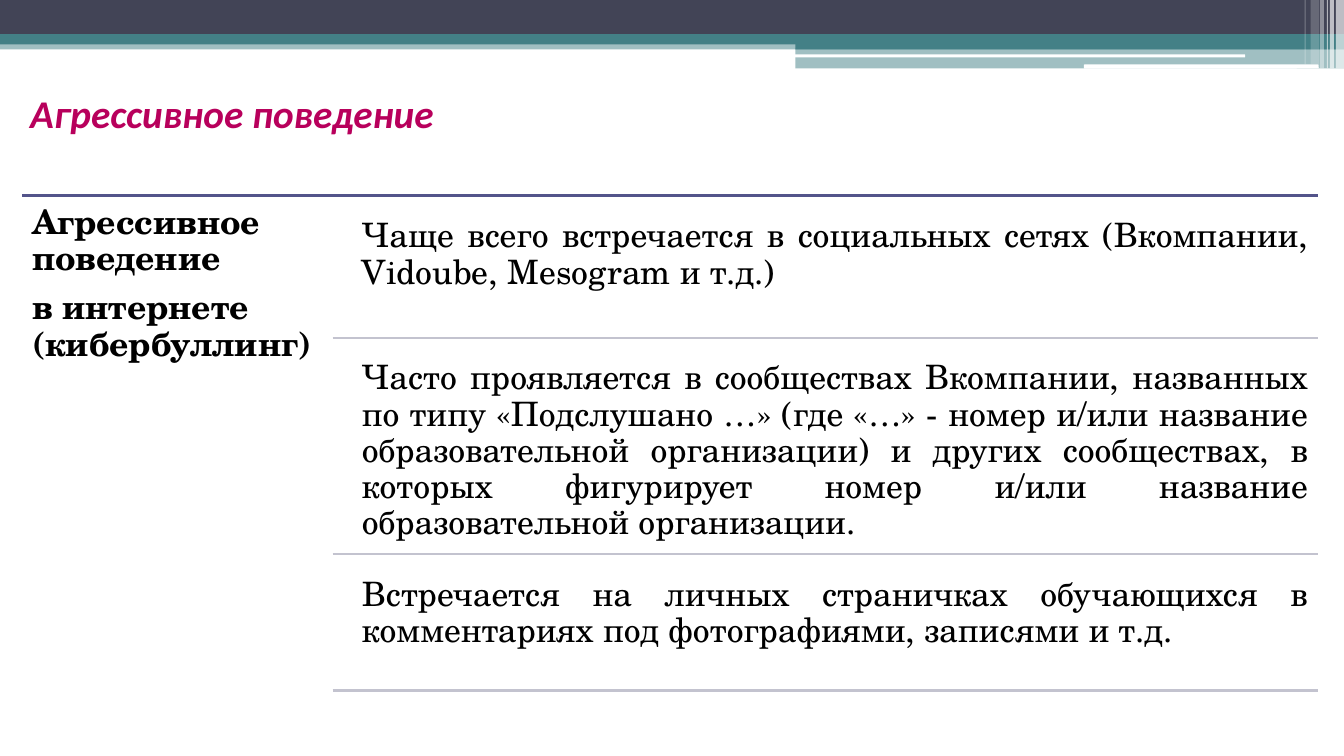
import pptx
import pptx.util
import pptx.dml.color
import pptx.enum.shapes
import pptx.enum.text
import pptx.oxml.ns
import lxml.etree

Inches = pptx.util.Inches
Pt = pptx.util.Pt
Shape = pptx.enum.shapes.MSO_SHAPE
Align = pptx.enum.text.PP_ALIGN
qn = pptx.oxml.ns.qn


def color(value):
    return pptx.dml.color.RGBColor.from_string(value)


class SlideBuilder:
    body_font = "TeX Gyre Schola"
    title_font = "Calibri"
    navy = "424456"
    teal = "438086"
    white = "FFFFFF"
    black = "000000"
    magenta = "B8005C"
    violet = "53548A"
    gray = "C3C3CF"

    def __init__(self, prs):
        self.slide = prs.slides.add_slide(prs.slide_layouts[5])

    def bar(self, left, top, width, height, fill, alpha=100, rounded=False):
        kind = Shape.ROUNDED_RECTANGLE if rounded else Shape.RECTANGLE
        sp = self.slide.shapes.add_shape(
            kind, Inches(left), Inches(top), Inches(width), Inches(height))
        sp.shadow.inherit = False
        sp.line.fill.background()
        sp.fill.solid()
        sp.fill.fore_color.rgb = color(fill)
        if alpha < 100:
            clr = sp.fill._xPr.find(qn("a:solidFill")).find(qn("a:srgbClr"))
            lxml.etree.SubElement(clr, qn("a:alpha")).set("val", str(alpha * 1000))

    def rule(self, left, right, y, line):
        cn = self.slide.shapes.add_connector(
            pptx.enum.shapes.MSO_CONNECTOR.STRAIGHT,
            Inches(left), Inches(y), Inches(right), Inches(y))
        cn.line.color.rgb = color(line)
        cn.line.width = Pt(1.5)
        lxml.etree.SubElement(cn._element.spPr, qn("a:effectLst"))

    def style(self, p, font, size, fill, align, bold=False, italic=False):
        p.alignment = align
        p.font.name = font
        p.font.size = Pt(size)
        p.font.color.rgb = color(fill)
        p.font.bold = bold
        p.font.italic = italic

    def title(self, left, top, width, height, text):
        sp = self.slide.shapes.title
        sp.left, sp.top = Inches(left), Inches(top)
        sp.width, sp.height = Inches(width), Inches(height)
        tf = sp.text_frame
        tf.text = text
        tf.word_wrap = True
        tf.auto_size = pptx.enum.text.MSO_AUTO_SIZE.SHAPE_TO_FIT_TEXT
        tf.vertical_anchor = pptx.enum.text.MSO_ANCHOR.TOP
        self.style(tf.paragraphs[0], self.title_font, 28, self.magenta,
                   Align.JUSTIFY, bold=True, italic=True)

    def text(self, left, top, width, height, paragraphs, bold=False):
        sp = self.slide.shapes.add_textbox(
            Inches(left), Inches(top), Inches(width), Inches(height))
        tf = sp.text_frame
        tf.word_wrap = True
        tf.margin_left = tf.margin_right = Inches(0.1)
        tf.margin_top = tf.margin_bottom = Inches(0.1)
        for i, (text, align) in enumerate(paragraphs):
            p = tf.add_paragraph() if i else tf.paragraphs[0]
            p.text = text
            p.line_spacing = 0.9
            p.space_after = Pt(9)
            self.style(p, self.body_font, 24, self.black, align, bold)


def main():
    prs = pptx.Presentation()
    prs.slide_width, prs.slide_height = Inches(13.33), Inches(7.5)
    s = SlideBuilder(prs)

    s.bar(0, 0.4, 13.33, 0.09, s.teal, 50)
    s.bar(0, 0, 13.33, 0.34, s.navy)
    s.bar(0, 0.34, 13.33, 0.1, s.teal)
    s.bar(7.89, 0.39, 5.44, 0.1, s.teal)
    s.bar(7.89, 0.48, 5.44, 0.2, s.teal, 50)
    s.bar(7.88, 0.54, 4.47, 0.03, s.white, rounded=True)
    s.bar(10.75, 0.64, 2.33, 0.04, s.white, rounded=True)
    stripes = [
        (13.25, 0.08, 0.68, 65),
        (13.19, 0.04, 0.68, 65),
        (13.16, 0.01, 0.68, 60),
        (13.09, 0.04, 0.68, 40),
        (13, 0.08, 0.64, 20),
        (12.94, 0.01, 0.64, 30),
    ]
    for left, width, height, alpha in stripes:
        s.bar(left, 0, width, height, s.white, alpha)

    s.title(0.2, 0.84, 10.19, 0.57, "Агрессивное поведение")

    right = 13.07
    s.rule(0.22, right, 1.94, s.violet)
    s.text(0.22, 1.94, 3.09, 5.05, [
        ("Агрессивное поведение", Align.JUSTIFY),
        ("в интернете (кибербуллинг)", Align.LEFT),
    ], bold=True)

    rows = [
        (2.07, 3.35, "Чаще всего встречается в социальных сетях (Вкомпании, "
                     "Vidoube, Mesogram и т.д.)"),
        (3.48, 5.5, "Часто проявляется в сообществах Вкомпании, названных по типу "
                    "«Подслушано …» (где «…» - номер и/или название "
                    "образовательной организации) и других сообществах, в которых "
                    "фигурирует номер и/или название образовательной организации."),
        (5.63, 6.85, "Встречается на личных страничках обучающихся в "
                     "комментариях под фотографиями, записями и т.д."),
    ]
    for top, bottom, text in rows:
        s.text(3.49, top, right - 3.49, bottom - top, [(text, Align.JUSTIFY)])
        s.rule(3.3, right, bottom, s.gray)

    prs.save("out.pptx")


if __name__ == "__main__":
    main()
